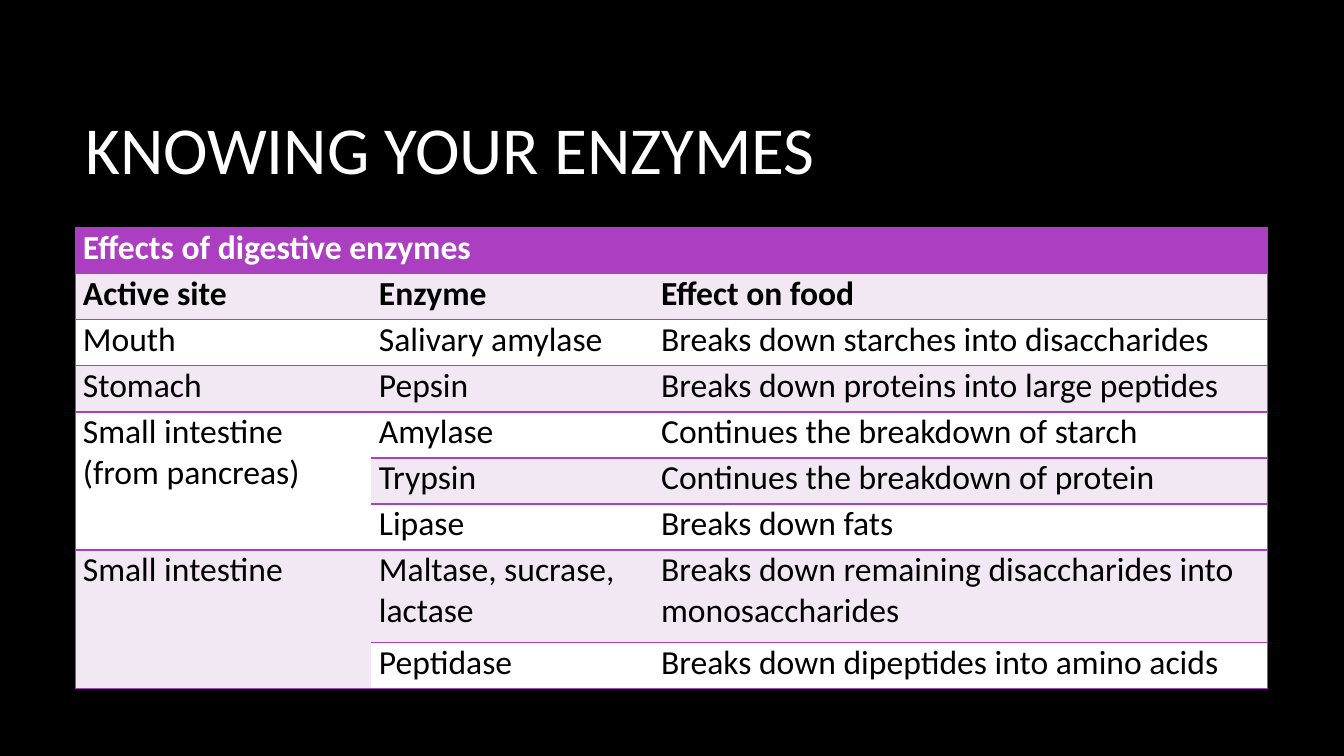
from lxml import etree
from pptx import Presentation
from pptx.dml.color import RGBColor
from pptx.enum.text import MSO_ANCHOR
from pptx.oxml.ns import qn
from pptx.util import Cm, Pt

MIDDLE = MSO_ANCHOR.MIDDLE
COLORS = {"black": "000000", "white": "FFFFFF", "purple": "AC3EC1", "lilac": "F1E8F4"}
COLUMN_WIDTHS = (7.46, 7.11, 15.48)
ROW_HEIGHT = 1.16
TALL_ROW = 7

# An empty active site continues the one above it.
ENZYME_ROWS = [
    ("Effects of digestive enzymes", "", ""),
    ("Active site", "Enzyme", "Effect on food"),
    ("Mouth", "Salivary amylase", "Breaks down starches into disaccharides"),
    ("Stomach", "Pepsin", "Breaks down proteins into large peptides"),
    ("Small intestine (from pancreas)", "Amylase", "Continues the breakdown of starch"),
    ("", "Trypsin", "Continues the breakdown of protein"),
    ("", "Lipase", "Breaks down fats"),
    ("Small intestine", "Maltase, sucrase, lactase",
     "Breaks down remaining disaccharides into monosaccharides"),
    ("", "Peptidase", "Breaks down dipeptides into amino acids"),
]
MERGES = [((0, 0), (0, 2)), ((4, 0), (6, 0)), ((7, 0), (8, 0))]


def rgb(name):
    return RGBColor.from_string(COLORS[name])


class EnzymeSlide:
    font = "Calibri"

    def __init__(self, presentation):
        self.slide = presentation.slides.add_slide(presentation.slide_layouts[6])
        background = self.slide.background.fill
        background.solid()
        background.fore_color.rgb = rgb("black")

    def add_text(self, frame, text, size, color, bold=False):
        run = frame.paragraphs[0].add_run()
        run.text = text
        run.font.name = self.font
        run.font.size = Pt(size)
        run.font.bold = bold
        run.font.color.rgb = rgb(color)

    def title(self, text, left, top, width, height):
        frame = self.slide.shapes.add_textbox(
            Cm(left), Cm(top), Cm(width), Cm(height)).text_frame
        frame.word_wrap = True
        frame.vertical_anchor = MIDDLE
        self.add_text(frame, text, 48, "white")

    def borders(self, cell, sides):
        """Draw the sides named in `sides` and clear the others."""
        properties = cell._tc.get_or_add_tcPr()
        for side in "LRTB":
            line = etree.SubElement(properties, qn(f"a:ln{side}"), w=str(Pt(1)))
            if side in sides:
                fill = etree.SubElement(line, qn("a:solidFill"))
                etree.SubElement(fill, qn("a:srgbClr"), val=COLORS["purple"])
            else:
                etree.SubElement(line, qn("a:noFill"))

    def cell(self, cell, text, sides, fill, color, bold):
        self.borders(cell, sides)
        cell.fill.solid()
        cell.fill.fore_color.rgb = rgb(fill)
        cell.margin_left = cell.margin_right = Cm(0.19)
        cell.margin_top = cell.margin_bottom = 0
        if text:
            self.add_text(cell.text_frame, text, 24, color, bold)

    def table(self, rows, left, top):
        height = ROW_HEIGHT * (len(rows) + 1)
        table = self.slide.shapes.add_table(
            len(rows), len(COLUMN_WIDTHS), Cm(left), Cm(top),
            Cm(sum(COLUMN_WIDTHS)), Cm(height)).table
        table.first_row = table.horz_banding = False
        for column, width in zip(table.columns, COLUMN_WIDTHS):
            column.width = Cm(width)
        for r, texts in enumerate(rows):
            table.rows[r].height = Cm(ROW_HEIGHT * (2 if r == TALL_ROW else 1))
            fill = "purple" if r == 0 else ("white", "lilac")[r % 2]
            color = "white" if r == 0 else "black"
            for c, text in enumerate(texts):
                continued = c == 0 and not text
                ends_site = r == len(rows) - 1 or rows[r + 1][0]
                sides = "" if continued else "T"
                if not continued or ends_site:
                    sides += "B"
                sides += {0: "L", len(texts) - 1: "R"}.get(c, "")
                self.cell(table.cell(r, c), text, sides, fill, color, r < 2)
        for first, last in MERGES:
            table.cell(*first).merge(table.cell(*last))


def main():
    presentation = Presentation()
    presentation.slide_width = Cm(33.87)
    presentation.slide_height = Cm(19.05)
    slide = EnzymeSlide(presentation)
    slide.title("KNOWING YOUR ENZYMES", 1.9, 1.7, 28.15, 4.04)
    slide.table(ENZYME_ROWS, 1.9, 5.74)
    presentation.save("out.pptx")


if __name__ == "__main__":
    main()
